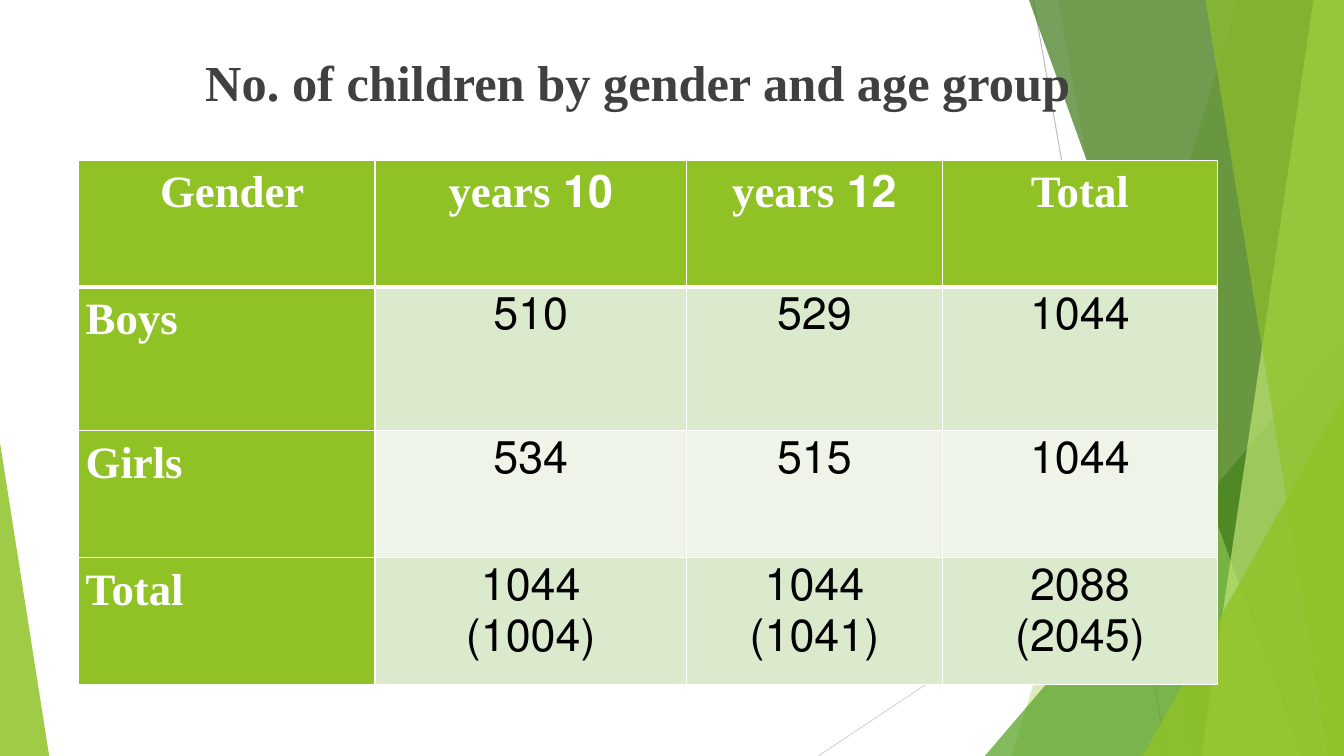
import dataclasses

import pptx
import pptx.dml.color
import pptx.enum.shapes
import pptx.enum.text
import pptx.oxml
import pptx.oxml.ns
import pptx.util
from lxml import etree

Cm, Pt = pptx.util.Cm, pptx.util.Pt
ALIGN = pptx.enum.text.PP_ALIGN
TOP = pptx.enum.text.MSO_ANCHOR.TOP
qn = pptx.oxml.ns.qn

WIDTH, HEIGHT = 33.87, 19.05
FONT = "Times New Roman"
LIME, WHITE, BLACK = "90C226", "FFFFFF", "000000"


@dataclasses.dataclass
class Line:
    x1: float
    y1: float
    x2: float
    y2: float
    color: str


@dataclasses.dataclass
class Band:
    """A strip from the given left edge to the right side of the slide."""
    top_x: float
    bottom_x: float
    color: str
    opacity: int


@dataclasses.dataclass
class Triangle:
    left: float
    top: float
    width: float
    apex: float
    color: str
    opacity: int


LINES = [
    Line(26.04, 0, 29.41, HEIGHT, "BFBFBF"),
    Line(WIDTH, 10.24, 20.62, HEIGHT, "D9D9D9"),
]
FACETS = [
    Band(31.19, 25.5, LIME, 30),
    Band(26.67, 30.05, LIME, 20),
    Triangle(24.82, 8.46, 9.05, 1, "54A021", 72),
    Band(25.93, 32.79, "3F7819", 70),
    Band(33.1, 30.28, "C0E474", 70),
    Band(30.38, 33.48, LIME, 65),
    Triangle(28.8, 9.98, 5.07, 1, LIME, 80),
    Triangle(0, 11.15, 1.24, 0, LIME, 85),
]
COLUMNS = [7.47, 7.85, 6.45, 6.93]
ROW_HEIGHTS = [3.2, 3.61, 3.2, 3.2]
ROWS = [
    ["Gender", "10 years", "12 years", "Total"],
    ["Boys", "510", "529", "1044"],
    ["Girls", "534", "515", "1044"],
    ["Total", "1044\n(1004)", "1044\n(1041)", "2088\n(2045)"],
]
ROW_FILLS = [LIME, "DBE9CD", "EEF4E8", "DBE9CD"]


def rgb(color: str) -> pptx.dml.color.RGBColor:
    return pptx.dml.color.RGBColor.from_string(color)


def fill_facet(sp, color: str, opacity: int) -> None:
    sp.shadow.inherit = False
    sp.line.fill.background()
    sp.fill.solid()
    sp.fill.fore_color.rgb = rgb(color)
    clr = sp.element.spPr.find(qn("a:solidFill")).find(qn("a:srgbClr"))
    etree.SubElement(clr, qn("a:alpha"), val=str(opacity * 1000))


def add_line(s, line: Line) -> None:
    cxn = s.shapes.add_connector(
        pptx.enum.shapes.MSO_CONNECTOR.STRAIGHT,
        Cm(line.x1), Cm(line.y1), Cm(line.x2), Cm(line.y2))
    cxn.line.color.rgb = rgb(line.color)
    cxn.line.width = Pt(0.75)
    etree.SubElement(cxn.element.spPr, qn("a:effectLst"))


def add_facet(s, facet: Band | Triangle) -> None:
    if isinstance(facet, Band):
        fb = s.shapes.build_freeform(Cm(facet.top_x), 0)
        fb.add_line_segments([(Cm(WIDTH), 0), (Cm(WIDTH), Cm(HEIGHT)),
                              (Cm(facet.bottom_x), Cm(HEIGHT))])
        sp = fb.convert_to_shape()
    else:
        sp = s.shapes.add_shape(
            pptx.enum.shapes.MSO_SHAPE.ISOSCELES_TRIANGLE,
            Cm(facet.left), Cm(facet.top),
            Cm(facet.width), Cm(HEIGHT - facet.top))
        sp.adjustments[0] = facet.apex
    fill_facet(sp, facet.color, facet.opacity)


def add_run(p, text: str, size: int, color: str, bold: bool) -> None:
    r = p.add_run()
    r.text = text
    r.font.name = FONT
    r.font.size = Pt(size)
    r.font.bold = bold
    r.font.color.rgb = rgb(color)


def set_title(s, text: str) -> None:
    """Fill the title placeholder and bring it in front of the facets."""
    sp = s.shapes.title
    sp.left, sp.top, sp.width, sp.height = Cm(1.47), Cm(1.17), Cm(29.21), Cm(2.2)
    sp.element.getparent().append(sp.element)
    tf = sp.text_frame
    tf.word_wrap = True
    tf.vertical_anchor = TOP
    p = tf.paragraphs[0]
    p.alignment = ALIGN.CENTER
    add_run(p, text, 36, "404040", True)


def set_borders(cell, row: int) -> None:
    header_edges = {(0, "B"), (1, "T")}
    tc_pr = cell._tc.get_or_add_tcPr()
    for side in "LRTB":
        width = Pt(3 if (row, side) in header_edges else 1)
        ln = etree.SubElement(tc_pr, qn(f"a:ln{side}"), w=str(width))
        solid = etree.SubElement(ln, qn("a:solidFill"))
        etree.SubElement(solid, qn("a:srgbClr"), val=WHITE)


def fill_cell(cell, row: int, col: int) -> None:
    heading = row == 0 or col == 0
    set_borders(cell, row)
    cell.fill.solid()
    cell.fill.fore_color.rgb = rgb(LIME if heading else ROW_FILLS[row])
    cell.margin_left = cell.margin_right = Cm(0.18)
    cell.margin_top = cell.margin_bottom = 0
    cell.vertical_anchor = TOP
    tf = cell.text_frame
    for i, text in enumerate(ROWS[row][col].split("\n")):
        p = tf.add_paragraph() if i else tf.paragraphs[0]
        p.alignment = ALIGN.LEFT if row and col == 0 else ALIGN.CENTER
        p.line_spacing = 1.15
        p_pr = p._p.get_or_add_pPr()
        if col:
            p_pr.set("rtl", "1")
        elif row == 0:
            p_pr.set("marL", str(Cm(0.28)))
        add_run(p, text, 32, WHITE if heading else BLACK, heading)


def add_children_table(s) -> None:
    table = s.shapes.add_table(
        len(ROWS), len(COLUMNS), Cm(1.98), Cm(4.04),
        Cm(sum(COLUMNS)), Cm(sum(ROW_HEIGHTS))).table
    for column, width in zip(table.columns, COLUMNS):
        column.width = Cm(width)
    for table_row, height in zip(table.rows, ROW_HEIGHTS):
        table_row.height = Cm(height)
    for row in range(len(ROWS)):
        for col in range(len(COLUMNS)):
            fill_cell(table.cell(row, col), row, col)


def main() -> None:
    prs = pptx.Presentation()
    prs.slide_width, prs.slide_height = Cm(WIDTH), Cm(HEIGHT)
    s = prs.slides.add_slide(prs.slide_layouts[5])
    for line in LINES:
        add_line(s, line)
    for facet in FACETS:
        add_facet(s, facet)
    set_title(s, "No. of children by gender and age group")
    add_children_table(s)
    prs.save("out.pptx")


if __name__ == "__main__":
    main()
